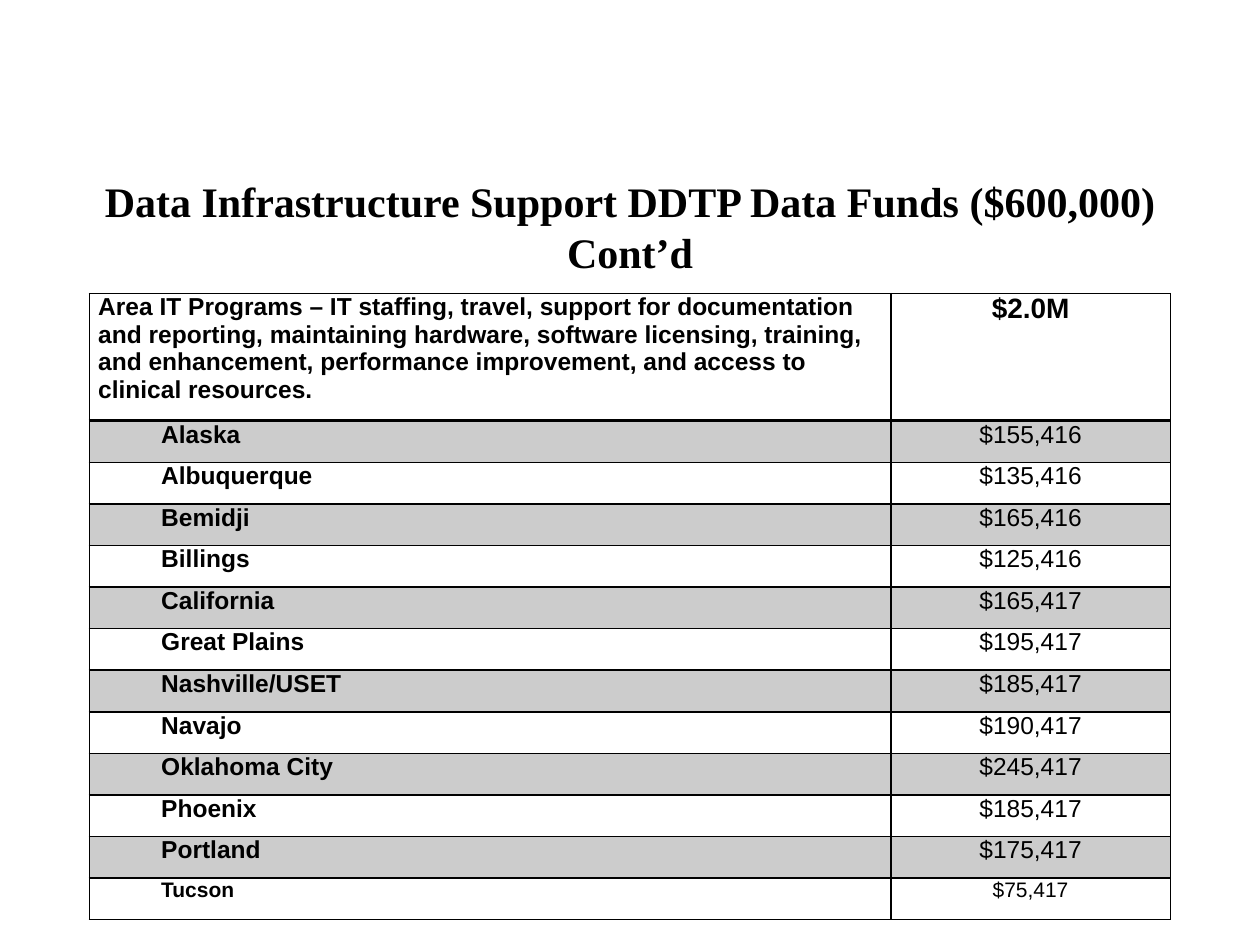
from dataclasses import dataclass

from lxml.etree import SubElement
from pptx import Presentation
from pptx.dml.color import RGBColor
from pptx.enum.text import MSO_ANCHOR, PP_ALIGN
from pptx.oxml.ns import qn
from pptx.util import Inches, Pt


@dataclass(frozen=True)
class Theme:
    ink: str = "000000"
    band_alpha: int = 20
    title_font: str = "Times New Roman"
    table_font: str = "Arial"
    title_size: int = 24
    total_size: int = 16
    body_size: int = 14
    last_size: int = 12


theme = Theme()

heading = (
    "Area IT Programs – IT staffing, travel, support for documentation and reporting, "
    "maintaining hardware, software licensing, training, and enhancement, "
    "performance improvement, and access to clinical resources."
)
area_funds = [
    ("Alaska", "$155,416"),
    ("Albuquerque", "$135,416"),
    ("Bemidji", "$165,416"),
    ("Billings", "$125,416"),
    ("California", "$165,417"),
    ("Great Plains", "$195,417"),
    ("Nashville/USET", "$185,417"),
    ("Navajo", "$190,417"),
    ("Oklahoma City", "$245,417"),
    ("Phoenix", "$185,417"),
    ("Portland", "$175,417"),
    ("Tucson", "$75,417"),
]
rows = [(heading, "$2.0M")] + area_funds


def set_borders(cell, widths):
    """Draw the left, right, top and bottom borders, with widths in points."""
    properties = cell._tc.get_or_add_tcPr()
    for side, width in zip("LRTB", widths):
        line = SubElement(properties, qn(f"a:ln{side}"), w=str(Pt(width)))
        fill = SubElement(line, qn("a:solidFill"))
        SubElement(fill, qn("a:srgbClr"), val=theme.ink)


def format_font(paragraph, name, size, bold):
    font = paragraph.runs[0].font
    font.name = name
    font.size = Pt(size)
    font.bold = bold
    font.color.rgb = RGBColor.from_string(theme.ink)


presentation = Presentation()
presentation.slide_width = Inches(10)
presentation.slide_height = Inches(7.5)
slide = presentation.slides.add_slide(presentation.slide_layouts[5])

title = slide.shapes.title
title.left, title.top = Inches(0.5), Inches(1.42)
title.width, title.height = Inches(9), Inches(0.75)
title.text_frame.text = "Data Infrastructure Support DDTP Data Funds ($600,000) Cont’d"
title.text_frame.vertical_anchor = MSO_ANCHOR.MIDDLE
title_paragraph = title.text_frame.paragraphs[0]
title_paragraph.alignment = PP_ALIGN.CENTER
format_font(title_paragraph, theme.title_font, theme.title_size, True)

table = slide.shapes.add_table(
    len(rows), 2, Inches(0.71), Inches(2.33), Inches(8.58), Inches(5)
).table
table.first_row = False
table.horz_banding = False
table.columns[0].width = Inches(6.36)
table.columns[1].width = Inches(2.22)

for row_index, row in enumerate(rows):
    is_heading = row_index == 0
    is_last = row_index == len(rows) - 1
    table.rows[row_index].height = Inches(1.01 if is_heading else 0.33)
    for column_index, text in enumerate(row):
        is_amount = column_index == 1
        cell = table.cell(row_index, column_index)
        cell.margin_left = cell.margin_right = Inches(0.07)
        cell.margin_top = cell.margin_bottom = 0
        set_borders(cell, (1, 1, 2 if row_index == 1 else 1, 2 if is_heading else 1))

        if row_index % 2:
            cell.fill.solid()
            cell.fill.fore_color.rgb = RGBColor.from_string(theme.ink)
            color = cell._tc.tcPr.find(f"{qn('a:solidFill')}/{qn('a:srgbClr')}")
            SubElement(color, qn("a:alpha"), val=str(theme.band_alpha * 1000))
        else:
            cell.fill.background()

        cell.text_frame.text = text
        paragraph = cell.text_frame.paragraphs[0]
        if is_amount:
            paragraph.alignment = PP_ALIGN.CENTER
        elif not is_heading:
            paragraph._p.get_or_add_pPr().set("marL", str(Inches(0.5)))

        size = theme.last_size if is_last else theme.body_size
        if is_heading and is_amount:
            size = theme.total_size
        format_font(paragraph, theme.table_font, size, is_heading or not is_amount)

presentation.save("out.pptx")
